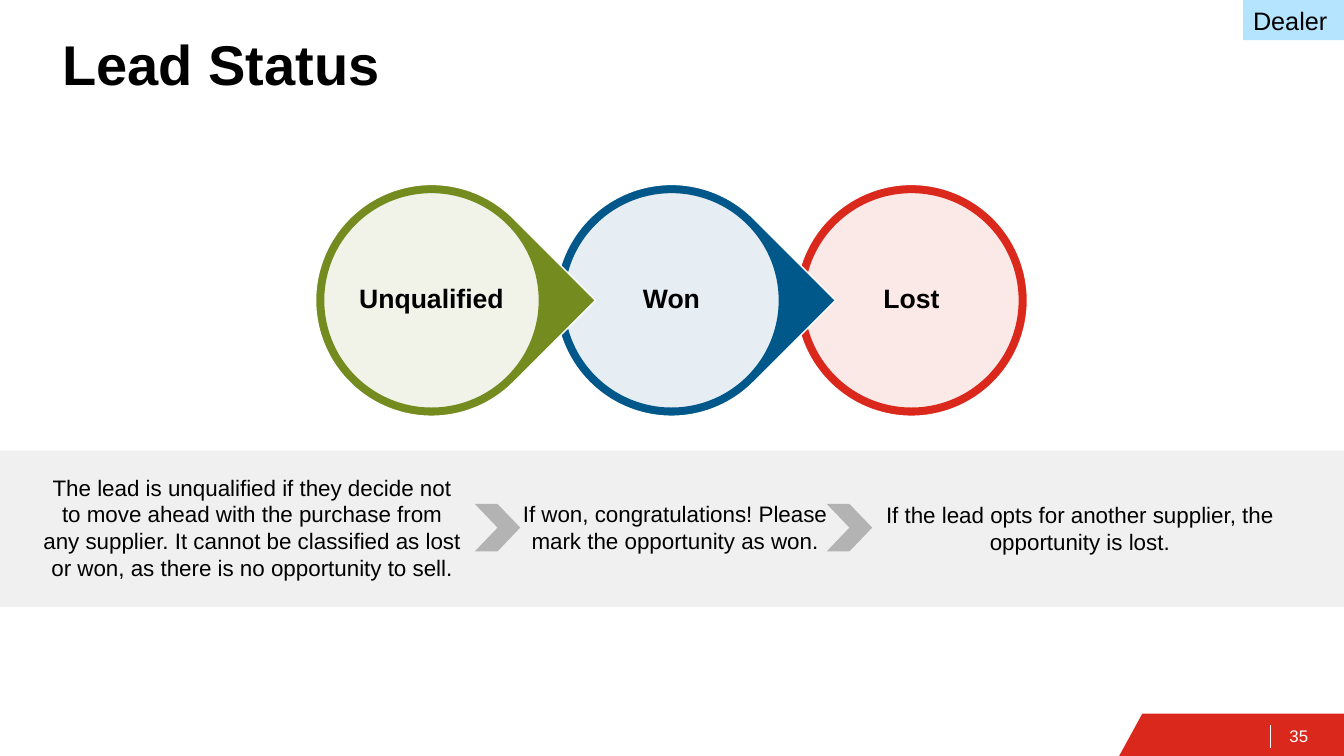
from lxml.etree import SubElement
from pptx import Presentation
from pptx.dml.color import RGBColor
from pptx.enum.shapes import MSO_CONNECTOR, MSO_SHAPE
from pptx.enum.text import MSO_ANCHOR, PP_ALIGN
from pptx.oxml.ns import qn
from pptx.util import Inches, Pt

HUES = {"red": "DA281C", "blue": "00578A", "green": "738B1F", "white": "FFFFFF",
        "black": "000000", "sky": "B5E4FF", "band": "F0F0F0", "gray": "B3B3B3"}


class Deck:
    """Holds the style and the current slide, and draws each kind of element."""

    face = "Arial"

    def __init__(self, wide, high):
        self.show = Presentation()
        self.show.slide_width = Inches(wide)
        self.show.slide_height = Inches(high)
        self.slide = self.show.slides.add_slide(self.show.slide_layouts[5])
        self.shapes = self.slide.shapes

    def hue(self, name):
        return RGBColor.from_string(HUES[name])

    def paint(self, shape, fill, line=None, alpha=None):
        shape.shadow.inherit = False
        shape.fill.solid()
        shape.fill.fore_color.rgb = self.hue(fill)
        if alpha:
            color = shape._element.spPr.find(qn("a:solidFill"))[0]
            SubElement(color, qn("a:alpha")).set("val", str(alpha * 1000))
        if line:
            shape.line.color.rgb = self.hue(line)
            shape.line.width = Pt(1)
        else:
            shape.line.fill.background()
        return shape

    def label(self, shape, text, size, hue="black", bold=False, align=PP_ALIGN.LEFT,
              anchor=MSO_ANCHOR.TOP, inset=(0.1, 0.05), space=1.0):
        frame = shape.text_frame
        frame.text = text
        side, edge = map(Inches, inset)
        form = {"word_wrap": True, "vertical_anchor": anchor, "margin_left": side,
                "margin_right": side, "margin_top": edge, "margin_bottom": edge}
        para = frame.paragraphs[0]
        for part, items in (
            (frame, form),
            (para, {"alignment": align, "line_spacing": space}),
            (para.font, {"name": self.face, "size": Pt(size), "bold": bold}),
        ):
            for key, val in items.items():
                setattr(part, key, val)
        para.font.color.rgb = self.hue(hue)

    def title(self, text, box):
        head = self.shapes.title
        head.left, head.top, head.width, head.height = map(Inches, box)
        self.label(head, text, 40, bold=True, anchor=MSO_ANCHOR.MIDDLE, space=0.9)

    def shape(self, kind, box, fill, line=None, alpha=None):
        item = self.shapes.add_shape(kind, *map(Inches, box))
        return self.paint(item, fill, line, alpha)

    def text(self, text, box, size, **form):
        self.label(self.shapes.add_textbox(*map(Inches, box)), text, size, **form)

    def outline(self, points, fill):
        spots = [(Inches(x), Inches(y)) for x, y in points]
        pen = self.shapes.build_freeform(*spots[0])
        pen.add_line_segments(spots[1:], close=True)
        self.paint(pen.convert_to_shape(), fill)

    def rule(self, ends, hue, width):
        line = self.shapes.add_connector(MSO_CONNECTOR.STRAIGHT, *map(Inches, ends))
        line.line.color.rgb = self.hue(hue)
        line.line.width = Pt(width)
        SubElement(line._element.spPr, qn("a:effectLst"))

    def status(self, left, name, hue, last):
        top, size, rim = 1.83, 2.3, 0.08
        kind = MSO_SHAPE.OVAL if last else MSO_SHAPE.TEAR
        drop = self.shape(kind, (left, top, size, size), hue, "white")
        drop.rotation = 0 if last else 45
        disc = size - 2 * rim
        self.shape(MSO_SHAPE.OVAL, (left + rim, top + rim, disc, disc), "white", hue, 90)
        self.text(name, (left + 0.38, top + 0.38, 1.54, 1.54), 19, bold=True,
                  align=PP_ALIGN.CENTER, anchor=MSO_ANCHOR.MIDDLE,
                  inset=(0.03, 0.03), space=0.9)


def main():
    deck = Deck(13.33, 7.5)
    deck.title("Lead Status", (0.52, 0.22, 10.18, 0.89))

    deck.outline([(11.1, 7.5), (11.33, 7.08), (13.33, 7.08), (13.33, 7.5)], "red")
    deck.text("35", (12.66, 7.1, 0.67, 0.4), 12, hue="white",
              anchor=MSO_ANCHOR.MIDDLE, inset=(0.13, 0.07))
    deck.rule((12.6, 7.19, 12.6, 7.42), "white", 0.75)

    steps = [("Unqualified", "green"), ("Won", "blue"), ("Lost", "red")]
    for i, (name, hue) in reversed(list(enumerate(steps))):
        deck.status(3.13 + 2.38 * i, name, hue, i == len(steps) - 1)

    tag = deck.shape(MSO_SHAPE.RECTANGLE, (12.33, 0, 1, 0.4), "sky")
    deck.label(tag, "Dealer", 18)

    deck.shape(MSO_SHAPE.RECTANGLE, (0, 4.47, 13.33, 1.55), "band")
    notes = [
        ("The lead is unqualified if they decide not to move ahead with the purchase "
         "from any supplier. It cannot be classified as lost or won, as there is no "
         "opportunity to sell.", (0.31, 4.65, 4.38, 1.18)),
        ("If won, congratulations! Please mark the opportunity as won.",
         (5.02, 4.91, 3.35, 0.64)),
        ("If the lead opts for another supplier, the opportunity is lost.",
         (8.65, 4.92, 4.12, 0.64)),
    ]
    for text, box in notes:
        deck.text(text, box, 16, align=PP_ALIGN.CENTER)
    for left in (4.71, 8.2):
        deck.shape(MSO_SHAPE.CHEVRON, (left, 5, 0.45, 0.47), "gray")

    deck.show.save("out.pptx")


if __name__ == "__main__":
    main()
